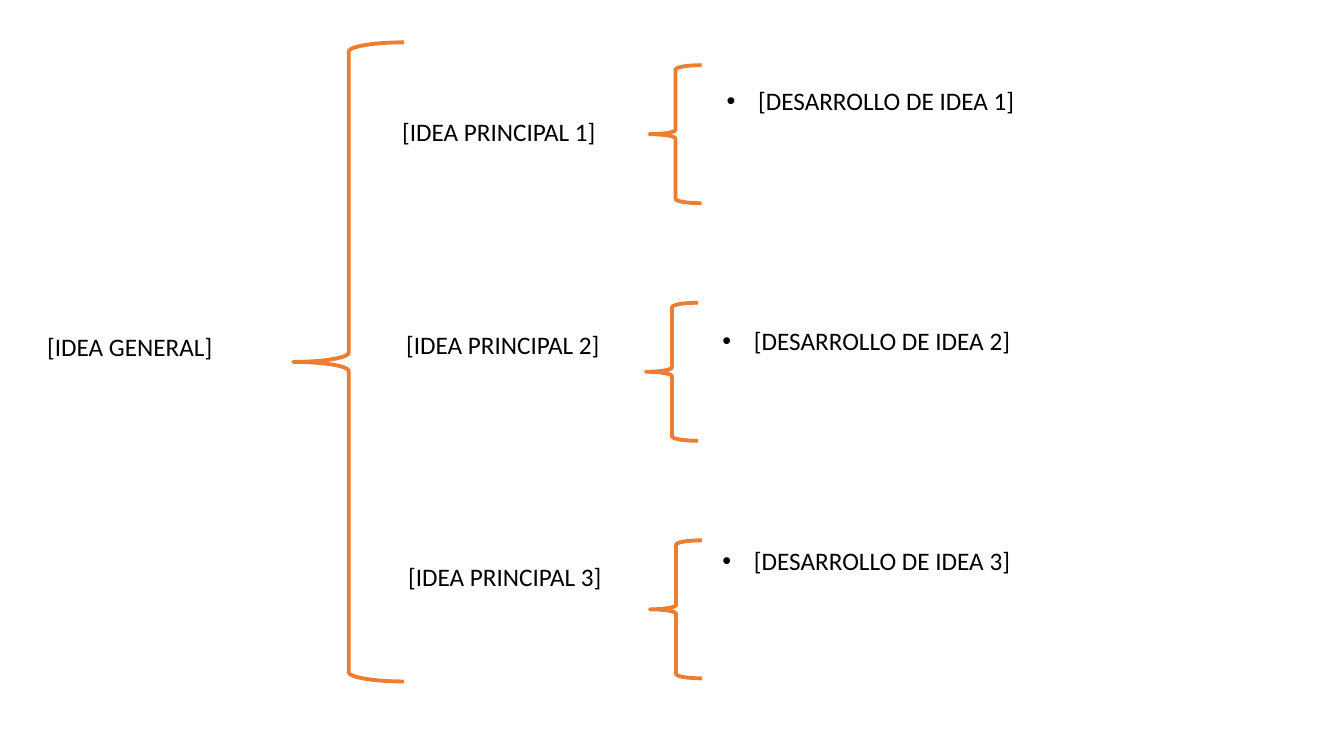
from dataclasses import dataclass

from lxml.etree import SubElement
from pptx import Presentation
from pptx.dml.color import RGBColor
from pptx.enum.shapes import MSO_SHAPE as Preset
from pptx.enum.text import MSO_AUTO_SIZE as AutoSize
from pptx.oxml.ns import qn
from pptx.slide import Slide
from pptx.util import Pt

FONT = "Calibri"
TEXT_COLOR = "000000"
BRACE_COLOR = "ED7D31"
LABEL_WIDTH, LABEL_HEIGHT = 168, 29
BRACE_WIDTH, BRACE_HEIGHT = 37.4, 98.6
FIRST_BRACE_TOP, BRACE_STEP = 46.6, 169.7
BULLET_INDENT = 22.5


@dataclass(frozen=True)
class Branch:
    """One main idea, its brace and its development."""
    idea_left: float
    idea_top: float
    brace_left: float
    detail_left: float
    detail_top: float
    detail_width: float


BRANCHES = [
    Branch(280.1, 79.4, 463.8, 511.9, 57.6, 239),
    Branch(283, 231.8, 461.3, 509, 229, 408.2),
    Branch(284.4, 397.4, 464.2, 509, 385.9, 408.2),
]


def rgb(color: str) -> RGBColor:
    return RGBColor.from_string(color)


def add_brace(slide: Slide, left: float, top: float, width: float, height: float) -> None:
    brace = slide.shapes.add_shape(
        Preset.LEFT_BRACE, Pt(left), Pt(top), Pt(width), Pt(height))
    brace.shadow.inherit = False
    brace.fill.background()
    brace.line.color.rgb = rgb(BRACE_COLOR)
    brace.line.width = Pt(2.75)


def add_label(slide: Slide, text: str, left: float, top: float,
              width: float = LABEL_WIDTH, bulleted: bool = False) -> None:
    label = slide.shapes.add_textbox(Pt(left), Pt(top), Pt(width), Pt(LABEL_HEIGHT))
    frame = label.text_frame
    frame.word_wrap = True
    frame.auto_size = AutoSize.SHAPE_TO_FIT_TEXT
    paragraph = frame.paragraphs[0]
    if bulleted:
        properties = paragraph._p.get_or_add_pPr()
        properties.set("marL", str(Pt(BULLET_INDENT)))
        properties.set("indent", str(-Pt(BULLET_INDENT)))
        SubElement(properties, qn("a:buFont"), typeface="Arial")
        SubElement(properties, qn("a:buChar"), char="•")
    run = paragraph.add_run()
    run.text = text
    run.font.name = FONT
    run.font.size = Pt(18)
    run.font.color.rgb = rgb(TEXT_COLOR)


def main() -> None:
    deck = Presentation()
    deck.slide_width, deck.slide_height = Pt(960), Pt(540)
    slide = deck.slides.add_slide(deck.slide_layouts[6])

    add_label(slide, "[IDEA GENERAL]", 26.6, 233.3)
    add_brace(slide, 209.5, 30.3, 79.2, 456.5)
    for number, branch in enumerate(BRANCHES, start=1):
        brace_top = FIRST_BRACE_TOP + (number - 1) * BRACE_STEP
        add_label(slide, f"[IDEA PRINCIPAL {number}]", branch.idea_left, branch.idea_top)
        add_brace(slide, branch.brace_left, brace_top, BRACE_WIDTH, BRACE_HEIGHT)
        add_label(slide, f"[DESARROLLO DE IDEA {number}]", branch.detail_left,
                  branch.detail_top, branch.detail_width, bulleted=True)

    deck.save("out.pptx")


if __name__ == "__main__":
    main()
